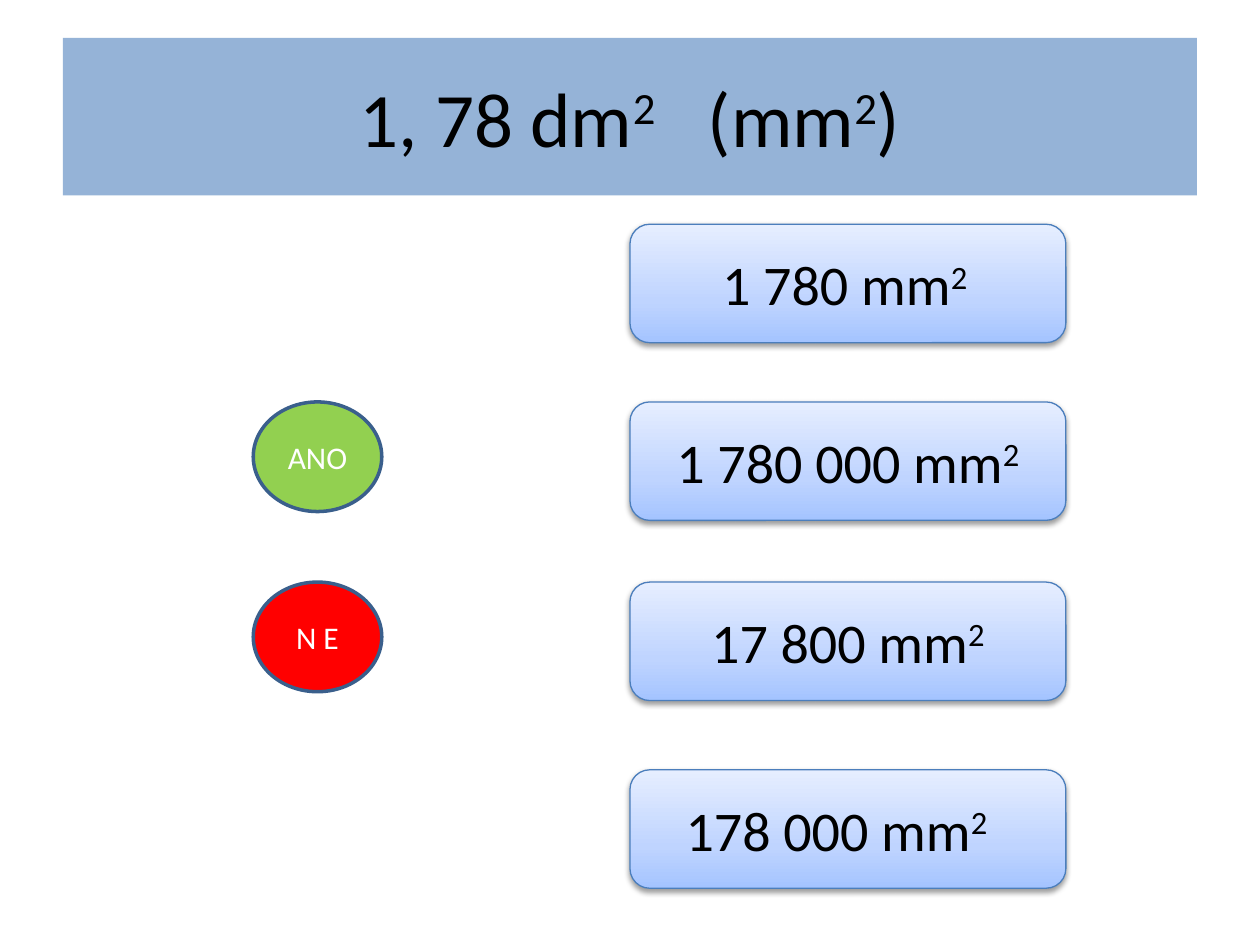
import copy
import pptx
import pptx.dml.color
import pptx.enum.shapes
import pptx.enum.text
import pptx.oxml
import pptx.oxml.ns
import pptx.util

THEME = {
    "font": "Calibri",
    "ink": "000000", "light": "FFFFFF",
    "banner": "95B3D7", "yes": "92D050", "no": "FF0000",
    "ring": "3A5F8C", "edge": "4B7EBC",
    "gradient": [(0, "A4C4FF"), (0.35, "BFD4FF"), (1, "E6EEFF")],
    "title_size": 44, "answer_size": 32, "choice_size": 18,
}
SHADOW = (
    f'<a:effectLst {pptx.oxml.ns.nsdecls("a")}>'
    '<a:outerShdw blurRad="39370" dist="20320" dir="5400000" rotWithShape="0">'
    '<a:srgbClr val="000000"><a:alpha val="38000"/></a:srgbClr>'
    '</a:outerShdw></a:effectLst>'
)
KIND = pptx.enum.shapes.MSO_SHAPE
inches = pptx.util.Inches


def rgb(name):
    return pptx.dml.color.RGBColor.from_string(THEME.get(name, name))


def add_label(kind, box, pieces, size, ink):
    """Add a shape with one centred line; every second piece is superscript."""
    shape = slide.shapes.add_shape(kind, *map(inches, box))
    shape.shadow.inherit = False
    frame = shape.text_frame
    frame.word_wrap = True
    frame.vertical_anchor = pptx.enum.text.MSO_ANCHOR.MIDDLE
    line = frame.paragraphs[0]
    line.alignment = pptx.enum.text.PP_ALIGN.CENTER
    line.font.name = THEME["font"]
    line.font.size = pptx.util.Pt(THEME[size])
    line.font.color.rgb = rgb(ink)
    for index, piece in enumerate(pieces):
        run = line.add_run()
        run.text = piece
        if index % 2:
            run._r.get_or_add_rPr().set("baseline", "30000")
    return shape


deck = pptx.Presentation()
deck.slide_width, deck.slide_height = inches(10), inches(7.5)
slide = deck.slides.add_slide(deck.slide_layouts[6])

# Grid: one column of choices, one of answers, four rows
choice_left, answer_left = 2.01, 5
rows = [1.78, 3.19, 4.62, 6.11]

# Question banner
question = add_label(KIND.RECTANGLE, (0.5, 0.3, 9, 1.25),
                     ["1, 78 dm", "2", "   (mm", "2", ")"], "title_size", "ink")
question.fill.solid()
question.fill.fore_color.rgb = rgb("banner")
question.line.fill.background()

# Yes and no choices beside the middle rows
for top, word, colour in zip(rows[1:3], ["ANO", "N E"], ["yes", "no"]):
    choice = add_label(KIND.OVAL, (choice_left, top, 1.02, 0.87),
                       [word], "choice_size", "light")
    choice.fill.solid()
    choice.fill.fore_color.rgb = rgb(colour)
    choice.line.color.rgb = rgb("ring")
    choice.line.width = pptx.util.Pt(2)

# Possible answers, with the right inset that sets each line's offset
answers = [("1 780 mm", 0.15), ("1 780 000 mm", 0.1),
           ("17 800 mm", 0.1), ("178 000 mm", 0.28)]
for top, (amount, inset) in zip(rows, answers):
    answer = add_label(KIND.ROUNDED_RECTANGLE, (answer_left, top, 3.46, 0.94),
                       [amount, "2"], "answer_size", "ink")
    answer.text_frame.margin_right = inches(inset)
    answer.line.color.rgb = rgb("edge")
    answer.line.width = pptx.util.Pt(0.75)

    # Three-stop gradient, darkest at the bottom
    answer.fill.gradient()
    answer.fill.gradient_angle = 90
    properties = answer._element.spPr
    stops = properties.find(".//" + pptx.oxml.ns.qn("a:gsLst"))
    stops.append(copy.deepcopy(stops[-1]))
    for stop, (position, colour) in zip(answer.fill.gradient_stops, THEME["gradient"]):
        stop.position = position
        stop.color.rgb = rgb(colour)

    # Soft shadow below
    plain = properties.find(pptx.oxml.ns.qn("a:effectLst"))
    properties.replace(plain, pptx.oxml.parse_xml(SHADOW))

deck.save("out.pptx")
